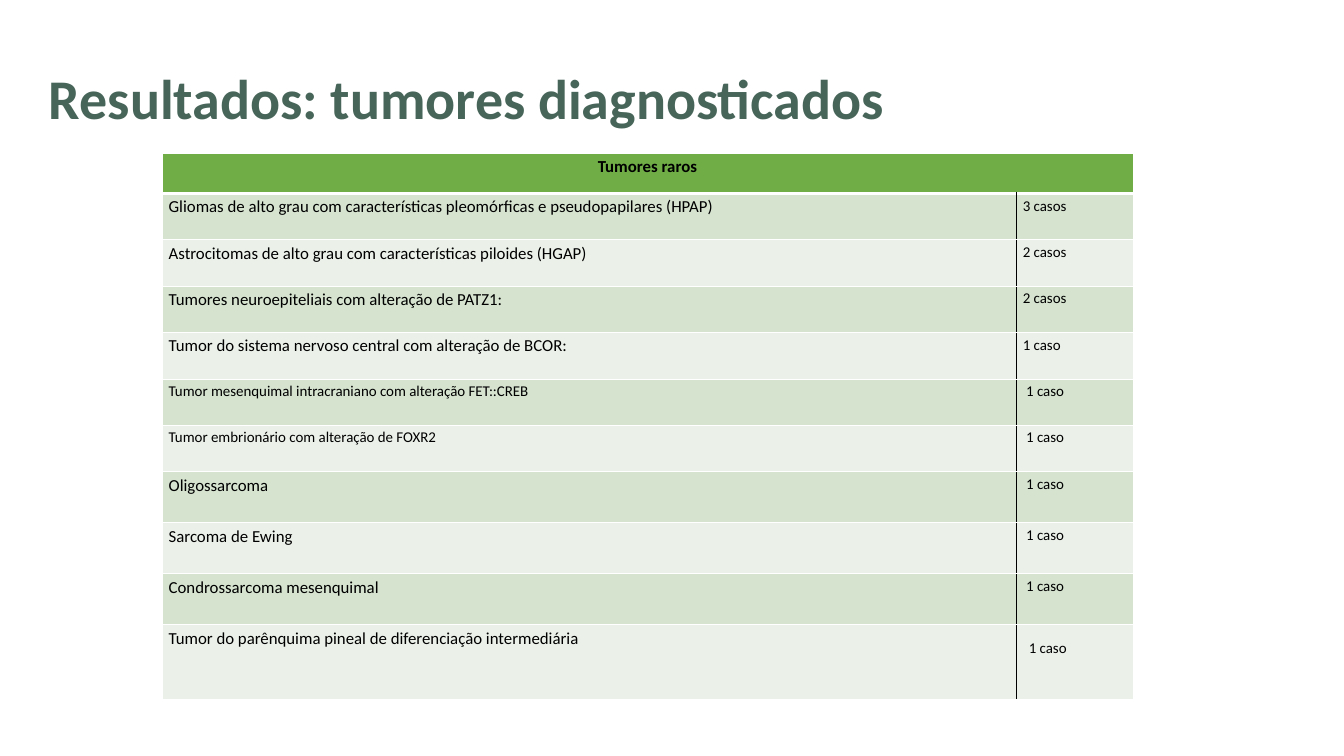
"""Builds a slide with a table of rare tumours and their case counts."""
from lxml import etree
from pptx import Presentation
from pptx import util as u
from pptx.dml.color import RGBColor
from pptx.enum import text
from pptx.oxml.ns import qn

THEME = {
    "font": "Calibri", "title": "476559", "ink": "000000", "line": "FFFFFF",
    "head": "70AD47", "bands": ("D5E3CF", "EBF1E9"),
    "big": 60, "lead": 92, "body": 18, "small": 16,
}
TITLE = "Resultados: tumores diagnosticados"
HEAD = "Tumores raros"
FLUSH, NUDGE, LAST = (0.1, 0.05), (0.15, 0.05), (0.19, 0.21)
ROWS = [
    ("Gliomas de alto grau com características pleomórficas e pseudopapilares (HPAP)", "body", "3 casos", FLUSH, 0.69),
    ("Astrocitomas de alto grau com características piloides (HGAP)", "body", "2 casos", FLUSH, 0.69),
    ("Tumores neuroepiteliais com alteração de PATZ1:", "body", "2 casos", FLUSH, 0.69),
    ("Tumor do sistema nervoso central com alteração de BCOR:", "body", "1 caso", FLUSH, 0.69),
    ("Tumor mesenquimal intracraniano com alteração FET::CREB", "small", "1 caso", NUDGE, 0.69),
    ("Tumor embrionário com alteração de FOXR2", "small", "1 caso", NUDGE, 0.69),
    ("Oligossarcoma", "body", "1 caso", NUDGE, 0.76),
    ("Sarcoma de Ewing", "body", "1 caso", NUDGE, 0.76),
    ("Condrossarcoma mesenquimal", "body", "1 caso", NUDGE, 0.76),
    ("Tumor do parênquima pineal de diferenciação intermediária", "body", "1 caso", LAST, 1.11),
]
WIDE, HIGH = 20, 11.25
COLS = (12.71, 1.74)
TALL = [0.6] + [row[-1] for row in ROWS]


def style(para, size, color, bold=False):
    font = para.font
    font.name, font.size, font.bold = THEME["font"], u.Pt(THEME[size]), bold
    font.color.rgb = RGBColor.from_string(THEME[color])


def edge(cell, **sides):
    props = cell._tc.get_or_add_tcPr()
    for spot, side in enumerate("LRTB"):
        color, width = sides.get(side, ("line", 1))
        line = etree.Element(qn(f"a:ln{side}"), w=str(u.Pt(width)))
        fill = etree.SubElement(line, qn("a:solidFill"))
        etree.SubElement(fill, qn("a:srgbClr"), val=THEME[color])
        props.insert(spot, line)


def put(cell, words, size, fill, pad=FLUSH, bold=False, **sides):
    cell.text = words
    cell.margin_left, cell.margin_top = map(u.Inches, pad)
    cell.fill.solid()
    cell.fill.fore_color.rgb = RGBColor.from_string(fill)
    style(cell.text_frame.paragraphs[0], size, "ink", bold)
    edge(cell, **sides)


def title(slide):
    box = slide.shapes.add_textbox(*map(u.Inches, (0.63, 0.57, 12.76, 1.33)))
    frame = box.text_frame
    frame.word_wrap = True
    frame.margin_top = u.Inches(0.1)
    para = frame.paragraphs[0]
    para.text = TITLE
    para.line_spacing = u.Pt(THEME["lead"])
    style(para, "big", "title", True)


def table(slide):
    area = map(u.Inches, (2.41, 2.28, sum(COLS), sum(TALL)))
    grid = slide.shapes.add_table(len(TALL), len(COLS), *area).table
    for col, width in zip(grid.columns, COLS):
        col.width = u.Inches(width)
    for row, height in zip(grid.rows, TALL):
        row.height = u.Inches(height)
    grid.cell(0, 0).merge(grid.cell(0, 1))
    for col in range(len(COLS)):
        put(grid.cell(0, col), "" if col else HEAD, "body", THEME["head"],
            bold=True, B=("line", 3))
    grid.cell(0, 0).text_frame.paragraphs[0].alignment = text.PP_ALIGN.CENTER
    for num, (name, size, count, pad, _) in enumerate(ROWS, 1):
        fill = THEME["bands"][(num - 1) % 2]
        top = ("line", 3 if num == 1 else 1)
        put(grid.cell(num, 0), name, size, fill, R=("ink", 1), T=top)
        put(grid.cell(num, 1), count, "small", fill, pad, L=("ink", 1), T=top)


def main():
    deck = Presentation()
    deck.slide_width, deck.slide_height = u.Inches(WIDE), u.Inches(HIGH)
    slide = deck.slides.add_slide(deck.slide_layouts[6])
    title(slide)
    table(slide)
    deck.save("out.pptx")


if __name__ == "__main__":
    main()
